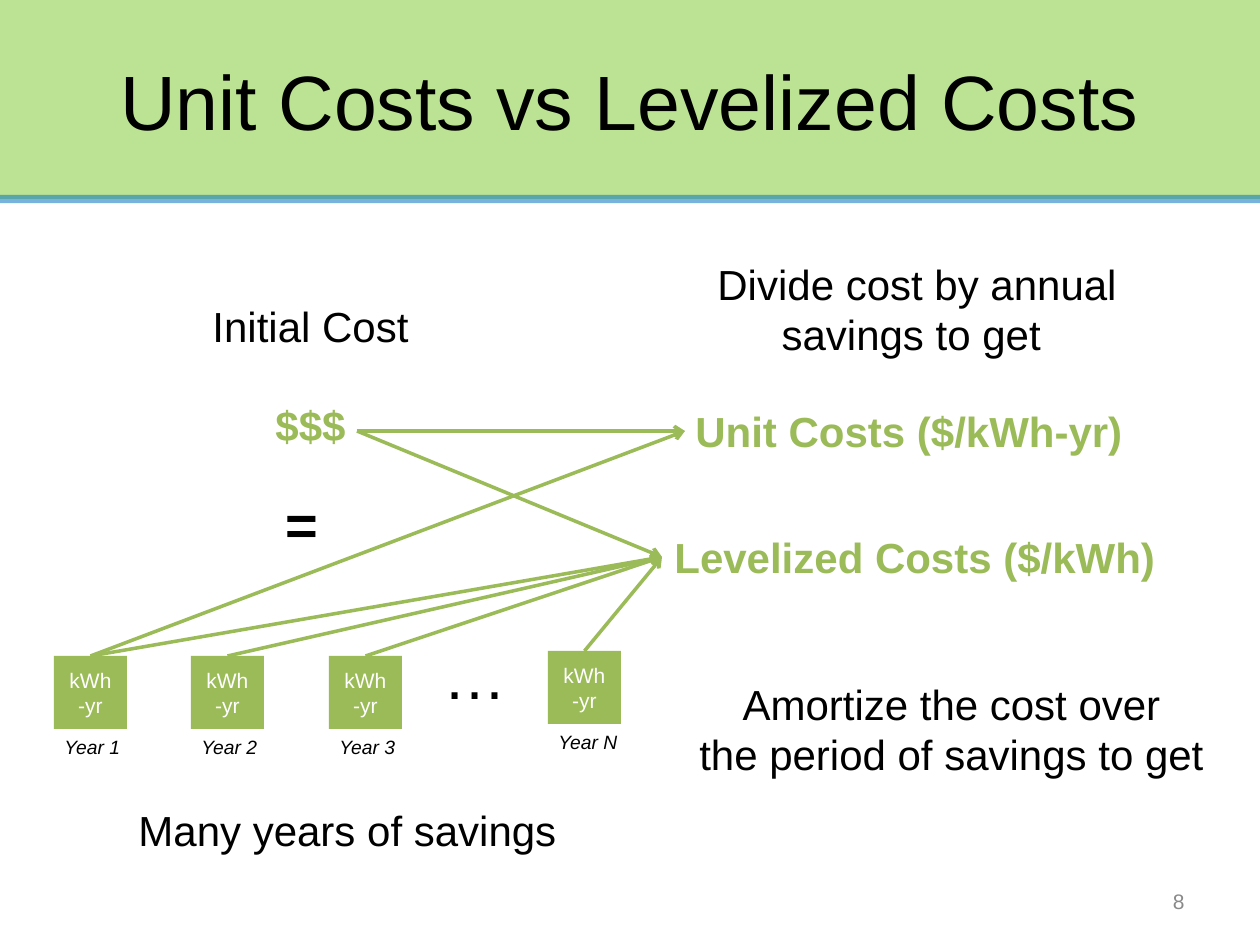
from lxml.etree import SubElement
from pptx import Presentation
from pptx.dml.color import RGBColor
from pptx.enum.shapes import MSO_CONNECTOR, MSO_SHAPE
from pptx.enum.text import MSO_ANCHOR, PP_ALIGN
from pptx.oxml.ns import qn
from pptx.util import Pt

SCALE = 914400 / 126  # EMU per px
GREEN, BLACK, WHITE = "9BBB59", "000000", "FFFFFF"
LEFT, CENTER, RIGHT = PP_ALIGN.LEFT, PP_ALIGN.CENTER, PP_ALIGN.RIGHT
rgb = RGBColor.from_string


def write(s, lines, size, color=BLACK, align=LEFT, **styles):
    tf = s.text_frame
    for i, line in enumerate(lines):
        p = tf.paragraphs[0] if i == 0 else tf.add_paragraph()
        p.alignment = align
        r = p.add_run()
        r.text = line
        r.font.color.rgb = rgb(color)
        for name, value in {"size": Pt(size), "name": "Arial", **styles}.items():
            setattr(r.font, name, value)
    return tf


def connect(start, end, color, width):
    s = shapes.add_connector(MSO_CONNECTOR.STRAIGHT,
                             *[round(v * SCALE) for v in (*start, *end)])
    s.line.color.rgb = rgb(color)
    s.line.width = Pt(width)
    SubElement(s.element.spPr, qn("a:effectLst"))
    return s


prs = Presentation()
prs.slide_width, prs.slide_height = round(1260 * SCALE), round(945 * SCALE)
slide = prs.slides.add_slide(prs.slide_layouts[5])
shapes = slide.shapes

# Title
title = shapes.title
title.left, title.top, title.width, title.height = [
    round(v * SCALE) for v in (63, 21, 1134, 158)]
write(title, ["Unit Costs vs Levelized Costs"], 44, align=CENTER)
title.text_frame.vertical_anchor = MSO_ANCHOR.MIDDLE

# Translucent header band and rule, behind the title
band = shapes.add_shape(MSO_SHAPE.RECTANGLE, 0, 0, prs.slide_width, round(199 * SCALE))
band.shadow.inherit = False
band.fill.solid()
band.fill.fore_color.rgb = rgb("92D050")
band.line.fill.background()
rule = connect((0, 199), (1260, 199), "0070C0", 4.75)
for s, alpha in ((band, 61000), (rule, 53000)):
    clr = next(s.element.spPr.iter(qn("a:srgbClr")))
    SubElement(clr, qn("a:alpha"), val=str(alpha))
    title.element.addprevious(s.element)

# Yearly savings: box and label
years = [("Year 1", 54, 656), ("Year 2", 191, 656), ("Year 3", 329, 656), ("Year N", 548, 651)]
BOX = 73
labels = []
for year, x, y in years:
    s = shapes.add_shape(MSO_SHAPE.RECTANGLE, *[round(v * SCALE) for v in (x, y, BOX, BOX)])
    s.shadow.inherit = False
    s.fill.solid()
    s.fill.fore_color.rgb = rgb(GREEN)
    s.line.fill.background()
    tf = write(s, ["kWh-yr"], 12, WHITE, CENTER)
    tf.vertical_anchor = MSO_ANCHOR.MIDDLE
    tf.word_wrap = True
    labels.append(((x - 2, y + BOX, 88, 36), [year], 11, BLACK, LEFT, {"italic": True}))

# Text boxes: place, lines, size, colour, alignment, styles
bold = {"bold": True}
texts = labels + [
    ((273, 483, 63, 81), ["="], 32, BLACK, LEFT, bold),
    ((126, 798, 459, 64), ["Many years of savings"], 24, BLACK, LEFT, {}),
    ((431, 630, 89, 89), ["…"], 36, BLACK, LEFT, {}),
    ((683, 672, 537, 115), ["Amortize the cost over", "the period of savings to get"],
     24, BLACK, CENTER, {}),
    ((703, 252, 428, 115), ["Divide cost by annual ", "savings to get "], 24, BLACK, CENTER, {}),
    ((683, 399, 456, 64), ["Unit Costs ($/kWh-yr)"], 24, GREEN, LEFT, bold),
    ((662, 525, 512, 64), ["Levelized Costs ($/kWh)"], 24, GREEN, LEFT, bold),
    ((903, 876, 294, 50), ["8"], 12, "898989", RIGHT, {}),
    ((199, 294, 223, 165), ["Initial Cost", "$$$"], 24, BLACK, CENTER, {}),
]
for place, lines, size, color, align, styles in texts:
    s = shapes.add_textbox(*[round(v * SCALE) for v in place])
    tf = write(s, lines, size, color, align, **styles)
    tf.word_wrap = align == RIGHT
    if align == RIGHT:
        tf.vertical_anchor = MSO_ANCHOR.MIDDLE

# The cost amount, set off below its heading in the last text box
p = tf.paragraphs[1]
p.space_before = Pt(28)
r = p.runs[0]
r.font.bold = True
r.font.color.rgb = rgb(GREEN)

# Arrows from the cost and the savings to the two results
cost, unit, levelized = (357, 431), (685, 431), (662, 557)
tops = [(x + BOX / 2, y) for _, x, y in years]
arrows = [(cost, unit), (tops[0], unit)] + [(start, levelized) for start in tops + [cost]]
for start, end in arrows:
    s = connect(start, end, GREEN, 2)
    SubElement(s.element.spPr.find(qn("a:ln")), qn("a:tailEnd"), type="arrow")

prs.save("out.pptx")
